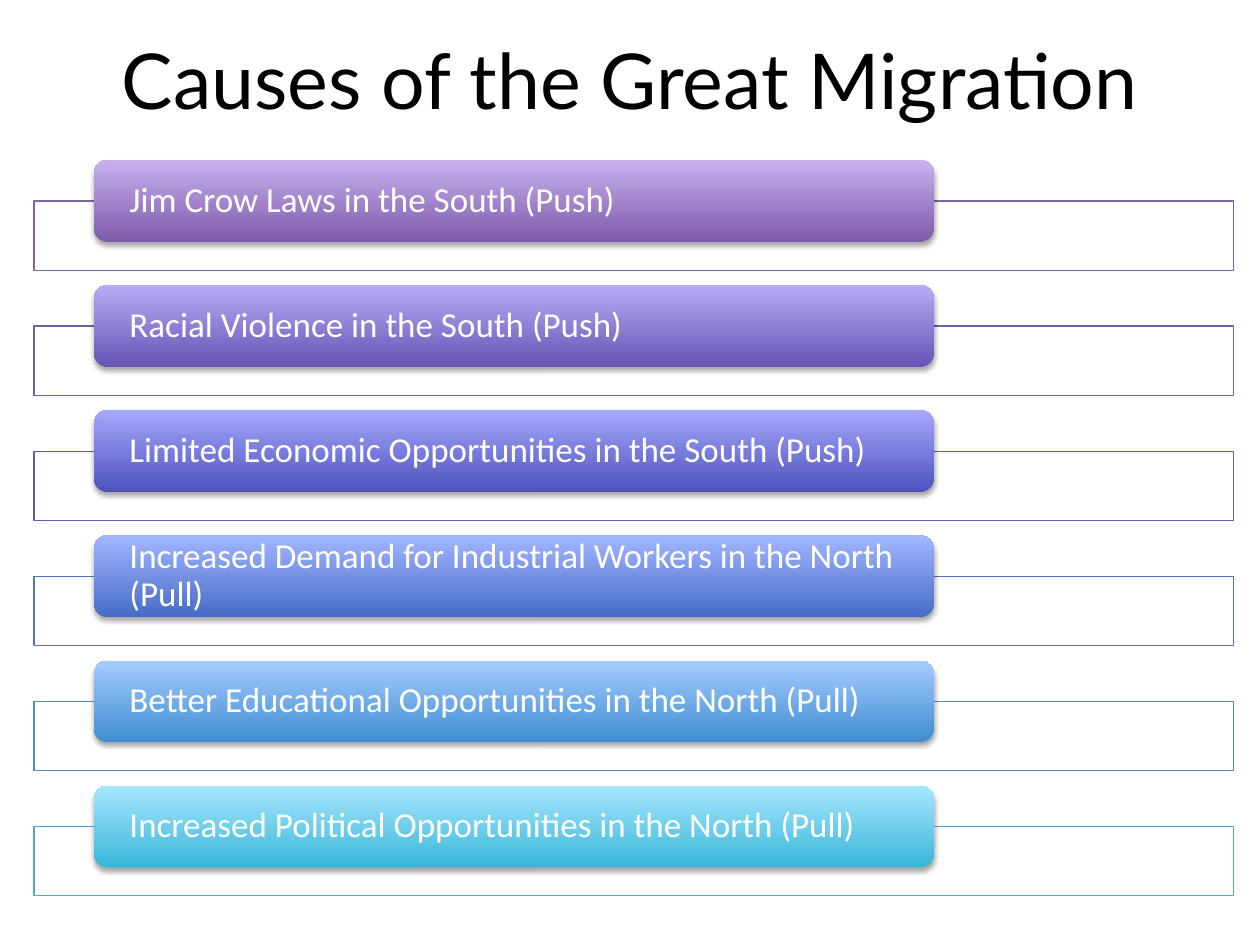
from lxml import etree
from pptx import Presentation
from pptx.dml.color import RGBColor
from pptx.enum.shapes import MSO_SHAPE
from pptx.enum.text import MSO_ANCHOR, PP_ALIGN
from pptx.oxml.ns import qn
from pptx.util import Inches, Pt

RECT, ROUND = MSO_SHAPE.RECTANGLE, MSO_SHAPE.ROUNDED_RECTANGLE
MIDDLE = MSO_ANCHOR.MIDDLE
LEFT, CENTER = PP_ALIGN.LEFT, PP_ALIGN.CENTER

COLORS = {"ink": "000000", "paper": "FFFFFF", "shadow": "000000"}

# wording, frame line, bar bottom, bar top
CAUSES = [
    ("Jim Crow Laws in the South (Push)", "8064A2", "7F5BAB", "C8B0ED"),
    ("Racial Violence in the South (Push)", "6E5FA9", "6754B5", "B6ABF4"),
    ("Limited Economic Opportunities in the South (Push)", "5A5EB1", "4D52BE", "A5A8FB"),
    ("Increased Demand for Industrial Workers in the North (Pull)", "5572B8", "466CC7", "A3B6FF"),
    ("Better Educational Opportunities in the North (Pull)", "508CBF", "3F8DD0", "A5CCFF"),
    ("Increased Political Opportunities in the North (Pull)", "4BACC6", "39B7D8", "A7E6FF"),
]


def rgb(code):
    return RGBColor.from_string(code)


def write(shape, text, font="Calibri", size=20, color="paper", align=LEFT,
          spacing=None, inset=0.1):
    frame = shape.text_frame
    frame.word_wrap = True
    frame.vertical_anchor = MIDDLE
    frame.margin_left = frame.margin_right = Inches(inset)
    frame.margin_top = frame.margin_bottom = 0
    para = frame.paragraphs[0]
    para.alignment = align
    para.line_spacing = spacing
    run = para.add_run()
    run.text = text
    run.font.name = font
    run.font.size = Pt(size)
    run.font.color.rgb = rgb(COLORS[color])


def add_alpha(color, percent):
    etree.SubElement(color, qn("a:alpha"), val=str(percent * 1000))


def add_shadow(shape):
    effects = shape._element.spPr.find(qn("a:effectLst"))
    outer = etree.SubElement(effects, qn("a:outerShdw"), blurRad=str(Pt(3.1)),
                             dist=str(Pt(1.8)), dir="5400000", rotWithShape="0")
    color = etree.SubElement(outer, qn("a:srgbClr"), val=COLORS["shadow"])
    add_alpha(color, 35)


def add_box(slide, kind, left, top, width, height):
    shape = slide.shapes.add_shape(kind, Inches(left), Inches(top),
                                   Inches(width), Inches(height))
    shape.shadow.inherit = False
    return shape


def add_frame(slide, left, top, width, height, line):
    frame = add_box(slide, RECT, left, top, width, height)
    frame.fill.solid()
    frame.fill.fore_color.rgb = rgb(COLORS["paper"])
    add_alpha(frame._element.spPr.find(".//" + qn("a:srgbClr")), 90)
    frame.line.color.rgb = rgb(line)
    frame.line.width = Pt(0.75)


def add_bar(slide, left, top, width, height, text, *shades):
    bar = add_box(slide, ROUND, left, top, width, height)
    bar.fill.gradient()
    bar.fill.gradient_angle = 90
    for stop, shade in zip(bar.fill.gradient_stops, shades):
        stop.color.rgb = rgb(shade)
    bar.line.fill.background()
    add_shadow(bar)
    write(bar, text, spacing=0.9, inset=0.25)


def add_title(slide, text, left, top, width, height):
    title = slide.shapes.title
    title.left, title.top = Inches(left), Inches(top)
    title.width, title.height = Inches(width), Inches(height)
    write(title, text, font="Lato", size=44, color="ink", align=CENTER)


def add_list(slide, left, top, width, height):
    """Stack one frame with an overlapping bar for each cause."""
    bar_high, frame_high, drop = 0.65, 0.55, 0.325
    step = (height - drop - frame_high) / (len(CAUSES) - 1)
    for i, (text, line, low, high) in enumerate(CAUSES):
        y = top + i * step
        add_frame(slide, left, y + drop, width, frame_high, line)
        add_bar(slide, left + width * 0.05, y, width * 0.7, bar_high, text, low, high)


def main():
    deck = Presentation()
    deck.slide_width, deck.slide_height = Inches(10), Inches(7.5)
    slide = deck.slides.add_slide(deck.slide_layouts[5])
    add_title(slide, "Causes of the Great Migration", 0.5, 0, 9, 1.25)
    add_list(slide, 0.27, 1.27, 9.52, 5.84)
    deck.save("out.pptx")


if __name__ == "__main__":
    main()
